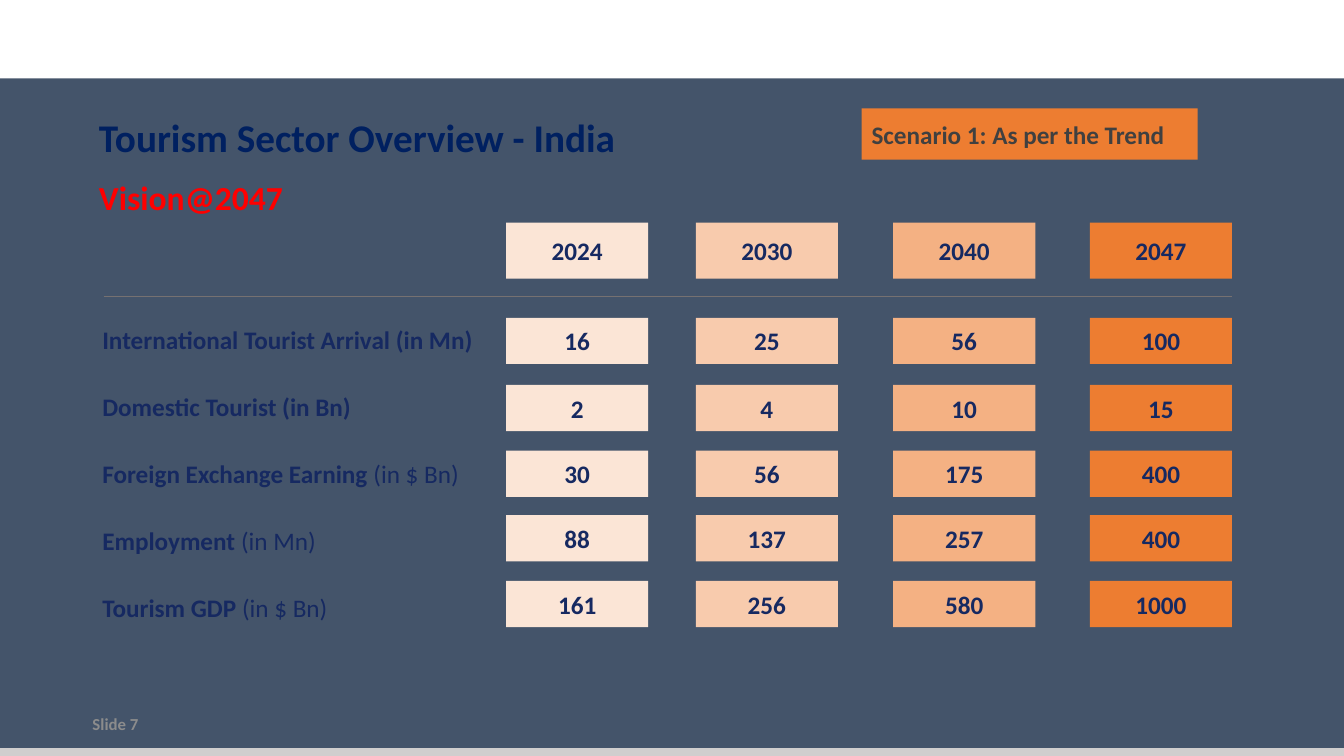
import pptx
import pptx.util
import pptx.dml.color
import pptx.enum.shapes
import pptx.enum.text
import pptx.oxml.ns
import lxml.etree

Pt = pptx.util.Pt
RGBColor = pptx.dml.color.RGBColor
ANCHOR = pptx.enum.text.MSO_ANCHOR
ALIGN = pptx.enum.text.PP_ALIGN

BACKGROUND = RGBColor(0x44, 0x54, 0x6A)
WHITE = RGBColor(0xFF, 0xFF, 0xFF)
FOOTER_LINE = RGBColor(0xD0, 0xCE, 0xCE)
FOOTER_TEXT = RGBColor(0x8C, 0x8C, 0x8C)
DIVIDER = RGBColor(0x76, 0x71, 0x71)
NAVY = RGBColor(0x16, 0x29, 0x61)
TITLE_BLUE = RGBColor(0x00, 0x20, 0x60)
RED = RGBColor(0xFF, 0x00, 0x00)
ORANGE = RGBColor(0xED, 0x7D, 0x31)
DARK_GREY = RGBColor(0x40, 0x40, 0x40)

YEARS = [
    ("2024", 0, RGBColor(0xFB, 0xE5, 0xD6)),
    ("2030", 135.5, RGBColor(0xF8, 0xCB, 0xAD)),
    ("2040", 276.5, RGBColor(0xF4, 0xB1, 0x83)),
    ("2047", 417, ORANGE),
]
INDICATORS = [
    ("International Tourist Arrival (in Mn)", "", 0, ["16", "25", "56", "100"]),
    ("Domestic Tourist (in Bn)", "", 48, ["2", "4", "10", "15"]),
    ("Foreign Exchange Earning ", "(in $ Bn)", 95, ["30", "56", "175", "400"]),
    ("Employment ", "(in Mn)", 141, ["88", "137", "257", "400"]),
    ("Tourism GDP ", "(in $ Bn)", 188, ["161", "256", "580", "1000"]),
]
LABEL_PITCH = 47.9


def place(shape, left, top, width, height):
    shape.left, shape.top = Pt(left), Pt(top)
    shape.width, shape.height = Pt(width), Pt(height)


def format_run(run, size, color, bold=True):
    run.font.name = "Calibri"
    run.font.size = Pt(size)
    run.font.bold = bold
    run.font.color.rgb = color


def write(shape, text, size, color, align=ALIGN.LEFT, anchor=ANCHOR.MIDDLE):
    frame = shape.text_frame
    frame.text = text
    frame.word_wrap = True
    frame.auto_size = pptx.enum.text.MSO_AUTO_SIZE.NONE
    frame.vertical_anchor = anchor
    paragraph = frame.paragraphs[0]
    paragraph.alignment = align
    format_run(paragraph.runs[0], size, color)
    return paragraph


def add_box(slide, left, top, width, height, fill):
    shape = slide.shapes.add_shape(
        pptx.enum.shapes.MSO_SHAPE.RECTANGLE, Pt(left), Pt(top), Pt(width), Pt(height))
    shape.shadow.inherit = False
    shape.fill.solid()
    shape.fill.fore_color.rgb = fill
    shape.line.fill.background()
    return shape


def add_text(slide, left, top, width, height, text, size, color, anchor=ANCHOR.MIDDLE):
    shape = slide.shapes.add_textbox(Pt(left), Pt(top), Pt(width), Pt(height))
    return write(shape, text, size, color, anchor=anchor)


def add_line(slide, left, top, width, color, weight):
    connector = slide.shapes.add_connector(
        pptx.enum.shapes.MSO_CONNECTOR.STRAIGHT, Pt(left), Pt(top), Pt(left + width), Pt(top))
    connector.line.color.rgb = color
    connector.line.width = Pt(weight)
    properties = connector._element.spPr
    lxml.etree.SubElement(properties, pptx.oxml.ns.qn("a:effectLst"))


def add_frame(slide, width, height):
    slide.background.fill.solid()
    slide.background.fill.fore_color.rgb = BACKGROUND
    add_box(slide, 0, 0, width, 56, WHITE)
    add_line(slide, 0, height - 3, width, FOOTER_LINE, 6)
    add_text(slide, 59, height - 32.5, 216, 19.5, "Slide 7", 12, FOOTER_TEXT)


def add_heading(slide, left, top):
    title, subtitle = slide.placeholders
    place(title, left, top, 599, 47)
    write(title, "Tourism Sector Overview - India", 28, TITLE_BLUE)

    place(subtitle, left, top + 47, 850, 39.5)
    paragraph = write(subtitle, "Vision@2047", 24, RED)
    paragraph.space_before = Pt(0)
    properties = paragraph._p.get_or_add_pPr()
    properties.set("marL", "0")
    properties.set("indent", "0")
    lxml.etree.SubElement(properties, pptx.oxml.ns.qn("a:buNone"))

    scenario = add_box(slide, left + 552, top + 3.5, 240, 36.5, ORANGE)
    write(scenario, "Scenario 1: As per the Trend", 18, DARK_GREY)


def add_indicator_grid(slide, left, top, width):
    cell_width, header_height, cell_height = 101.5, 40, 33
    columns_left = left + 295.5
    rows_top = top + 68
    add_line(slide, left + 8, top + 53, width - 8, DIVIDER, 0.75)

    for index, (name, unit, offset, values) in enumerate(INDICATORS):
        label = add_text(slide, left, rows_top + 1.2 + index * LABEL_PITCH, 283, 29,
                         name, 18, NAVY, ANCHOR.TOP)
        if unit:
            run = label.add_run()
            run.text = unit
            format_run(run, 18, NAVY, bold=False)

    for column, (year, shift, fill) in enumerate(YEARS):
        cells = [(year, top, header_height)]
        cells += [(values[column], rows_top + offset, cell_height)
                  for name, unit, offset, values in INDICATORS]
        for text, cell_top, height in cells:
            cell = add_box(slide, columns_left + shift, cell_top, cell_width, height, fill)
            write(cell, text, 18, NAVY, ALIGN.CENTER)


def main():
    presentation = pptx.Presentation()
    presentation.slide_width, presentation.slide_height = Pt(960), Pt(540)
    slide = presentation.slides.add_slide(presentation.slide_layouts[1])
    add_frame(slide, 960, 540)
    add_heading(slide, 63.5, 74)
    add_indicator_grid(slide, 66, 159, 814)
    presentation.save("out.pptx")


if __name__ == "__main__":
    main()
